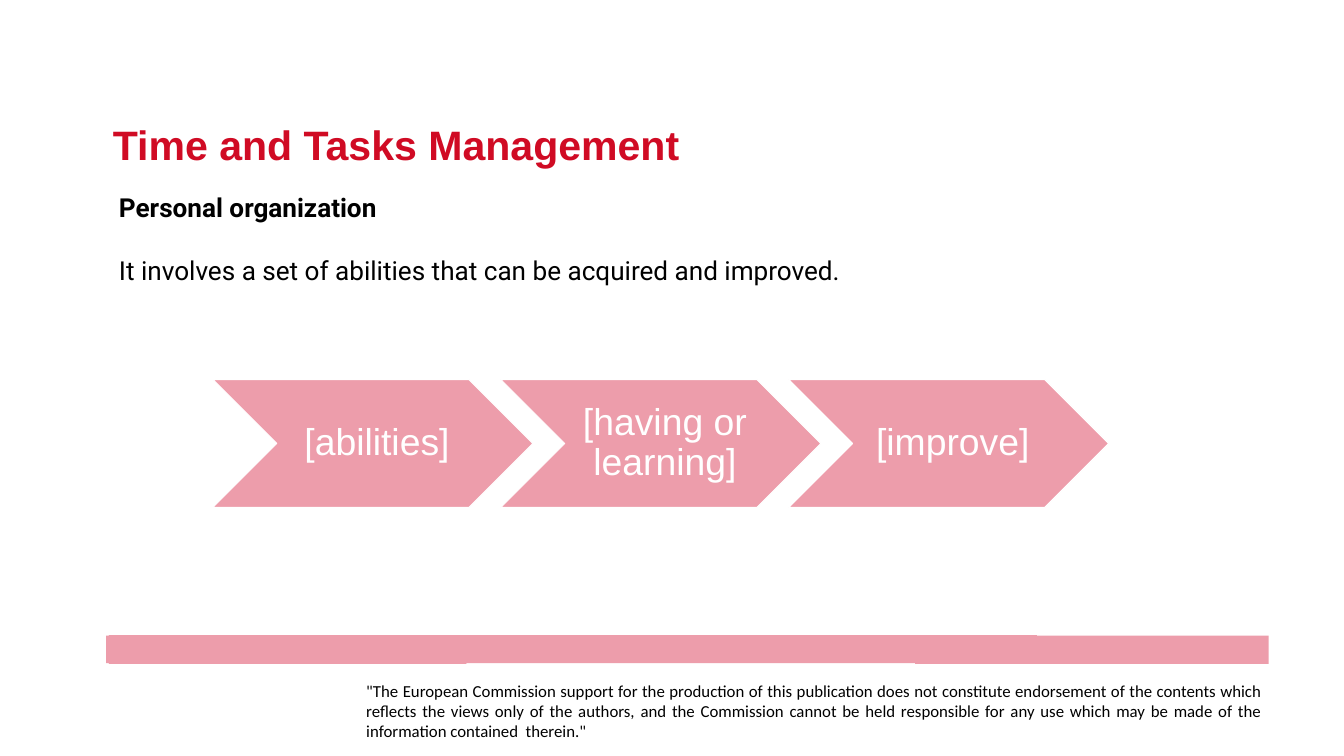
import pptx
import pptx.util
import pptx.dml.color
import pptx.enum.shapes
import pptx.enum.text
import pptx.oxml.ns
import lxml.etree
from dataclasses import dataclass

ALIGN = pptx.enum.text.PP_ALIGN
ANCHOR = pptx.enum.text.MSO_ANCHOR
COLUMNS = 20
ROWS = 11.25
CELL = pptx.util.Inches(1)


@dataclass(frozen=True)
class Theme:
    heading: str = "D00B24"
    accent: str = "ED9DAB"
    ink: str = "000000"
    paper: str = "FFFFFF"
    sans: str = "Arial"
    reading: str = "Roboto"
    legal: str = "Calibri"
    heading_size: int = 44
    step_size: int = 40
    body_size: int = 28
    legal_size: int = 18


THEME = Theme()
STEPS = ("[abilities]", "[having or learning]", "[improve]")
STATEMENT = "It involves a set of abilities that can be acquired and improved."
DISCLAIMER = (
    '"The European Commission support for the production of this publication '
    "does not constitute endorsement of the contents which reflects the views "
    "only of the authors, and the Commission cannot be held responsible for any "
    'use which may be made of the information contained  therein."'
)
BAND_OUTLINE = (
    (18.88, 9.46), (15.43, 9.46), (15.43, 9.45), (1.62, 9.45),
    (1.62, 9.46), (1.58, 9.46), (1.58, 9.87), (1.62, 9.87),
    (1.62, 9.88), (6.94, 9.88), (6.94, 9.87), (13.62, 9.87),
    (13.62, 9.88), (18.88, 9.88),
)


def grid(cells):
    return pptx.util.Emu(round(cells * CELL))


def rgb(value):
    return pptx.dml.color.RGBColor.from_string(value)


def apply(target, values):
    for key, value in values.items():
        setattr(target, key, value)


def place(holder, left, top, width, height):
    apply(holder, {"left": grid(left), "top": grid(top),
                   "width": grid(width), "height": grid(height)})


def set_frame(frame, anchor, insets):
    sides = ("margin_left", "margin_top", "margin_right", "margin_bottom")
    apply(frame, dict(zip(sides, map(grid, insets))))
    apply(frame, {"word_wrap": True, "vertical_anchor": anchor,
                  "auto_size": pptx.enum.text.MSO_AUTO_SIZE.NONE})


def write(paragraph, text, face, size, color, bold=False,
          align=ALIGN.LEFT, spacing=1.0, before=0):
    paragraph.text = text
    apply(paragraph, {"alignment": align, "line_spacing": spacing,
                      "space_before": pptx.util.Pt(before)})
    font = paragraph.runs[0].font
    apply(font, {"name": face, "size": pptx.util.Pt(size), "bold": bold})
    font.color.rgb = rgb(color)


def remove_bullet(paragraph):
    properties = paragraph._p.get_or_add_pPr()
    properties.set("marL", "0")
    properties.set("indent", "0")
    lxml.etree.SubElement(properties, pptx.oxml.ns.qn("a:buNone"))


def add_band(slide):
    outline = [(grid(x), grid(y)) for x, y in BAND_OUTLINE]
    builder = slide.shapes.build_freeform(*outline[0])
    builder.add_line_segments(outline[1:], close=True)
    band = builder.convert_to_shape()
    band.shadow.inherit = False
    band.fill.solid()
    band.fill.fore_color.rgb = rgb(THEME.accent)
    band.line.fill.background()


def add_disclaimer(slide):
    disclaimer = slide.shapes.add_textbox(
        grid(5.45), grid(10.15), grid(13.33), grid(0.76))
    set_frame(disclaimer.text_frame, ANCHOR.TOP, (0, 0, 0, 0))
    write(disclaimer.text_frame.paragraphs[0], DISCLAIMER, THEME.legal,
          THEME.legal_size, THEME.ink, align=ALIGN.JUSTIFY, spacing=0.98)


def fill_heading(slide):
    heading = slide.shapes.title
    place(heading, 1.58, 1.72, 9.64, 0.83)
    set_frame(heading.text_frame, ANCHOR.TOP, (0.1, 0.05, 0.1, 0.05))
    write(heading.text_frame.paragraphs[0], "Time and Tasks Management",
          THEME.sans, THEME.heading_size, THEME.heading, bold=True)


def fill_body(slide):
    body = slide.placeholders[1]
    place(body, 1.67, 2.8, 14.42, 1.5)
    frame = body.text_frame
    set_frame(frame, ANCHOR.TOP, (0.1, 0.05, 0.1, 0.05))
    topic, statement = frame.paragraphs[0], frame.add_paragraph()
    for paragraph in (topic, statement):
        remove_bullet(paragraph)
    write(topic, "Personal organization", THEME.reading, THEME.body_size,
          THEME.ink, bold=True)
    write(statement, STATEMENT, THEME.reading, THEME.body_size, THEME.ink,
          before=34)


def add_step(slide, index, label):
    width, height = 4.76, 1.9
    pitch = 0.9 * width
    step = slide.shapes.add_shape(
        pptx.enum.shapes.MSO_SHAPE.CHEVRON, grid(3.17 + index * pitch),
        grid(5.65), grid(width), grid(height))
    step.shadow.inherit = False
    step.fill.solid()
    step.fill.fore_color.rgb = rgb(THEME.accent)
    step.line.color.rgb = rgb(THEME.paper)
    step.line.width = pptx.util.Pt(1)
    set_frame(step.text_frame, ANCHOR.MIDDLE, (0.18, 0.06, 0.06, 0.06))
    write(step.text_frame.paragraphs[0], label, THEME.sans, THEME.step_size,
          THEME.paper, align=ALIGN.CENTER, spacing=0.9)


def main():
    deck = pptx.Presentation()
    apply(deck, {"slide_width": grid(COLUMNS), "slide_height": grid(ROWS)})
    slide = deck.slides.add_slide(deck.slide_layouts[1])
    add_band(slide)
    add_disclaimer(slide)
    fill_heading(slide)
    fill_body(slide)
    for index, label in enumerate(STEPS):
        add_step(slide, index, label)
    deck.save("out.pptx")


if __name__ == "__main__":
    main()
